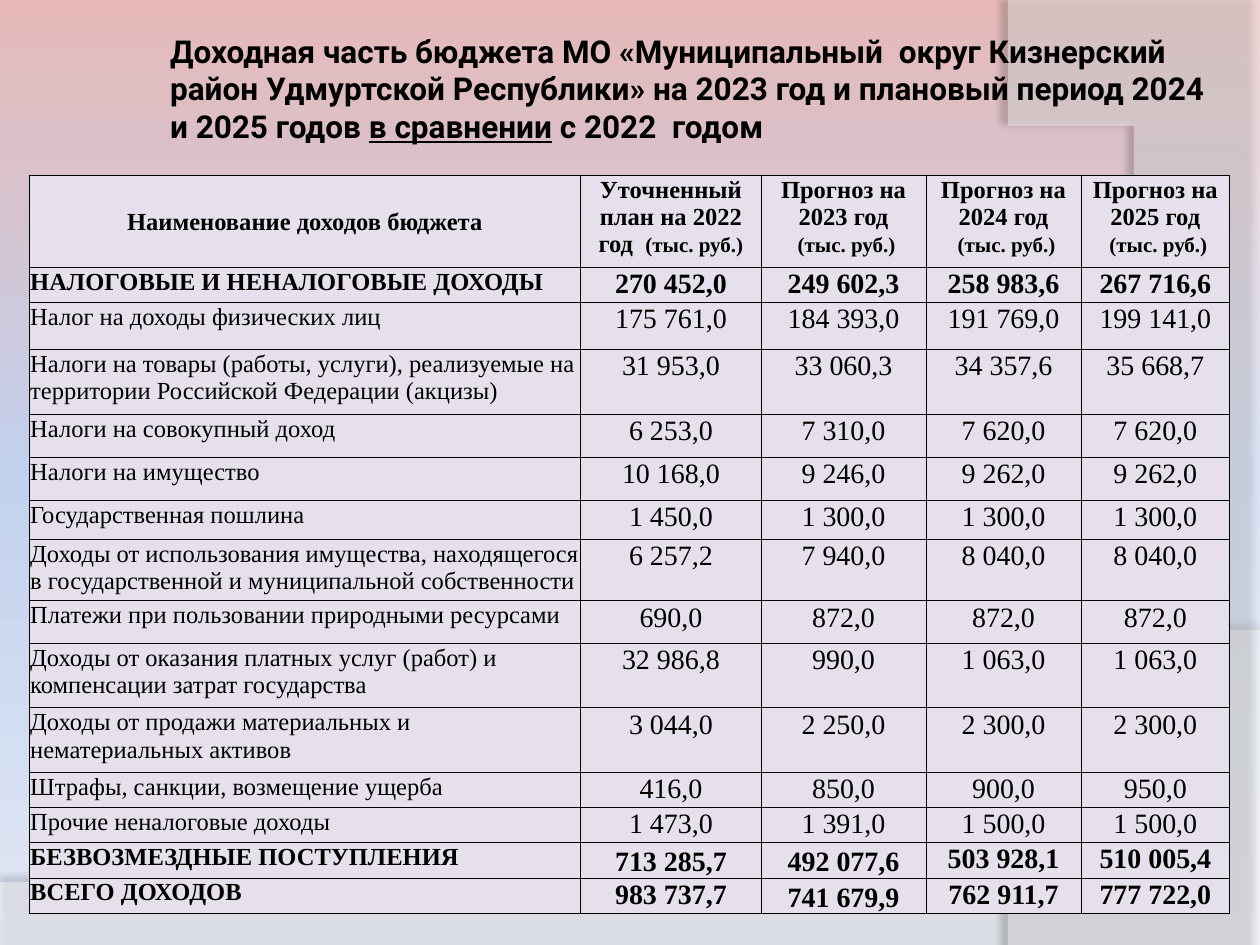
import copy

import pptx
import pptx.dml.color
import pptx.enum.text
import pptx.oxml
import pptx.oxml.ns
import pptx.util
from lxml import etree

Inches, Pt = pptx.util.Inches, pptx.util.Pt
RGBColor = pptx.dml.color.RGBColor
ALIGN = pptx.enum.text.PP_ALIGN
ANCHOR = pptx.enum.text.MSO_ANCHOR
qn = pptx.oxml.ns.qn

WIDTH, HEIGHT = 10, 7.5
BLACK = RGBColor(0x00, 0x00, 0x00)
WHITE = RGBColor(0xFF, 0xFF, 0xFF)
LILAC = RGBColor(0xE6, 0xE0, 0xEC)
PINK = RGBColor(0xE6, 0xB9, 0xB8)
BLUE = RGBColor(0xC2, 0xD1, 0xED)
PALE = RGBColor(0xE1, 0xE8, 0xF5)
SERIF = "Times New Roman"

TITLE = [
    ("Доходная часть бюджета МО «Муниципальный  округ Кизнерский район Удмуртской "
     "Республики» на 2023 год и плановый период 2024 и 2025 годов ", False),
    ("в сравнении", True),
    (" с 2022  годом", False),
]
UNIT = "(тыс. руб.)"
HEADERS = [["Наименование доходов бюджета"], ["Уточненный план на 2022 год  " + UNIT]] + [
    [f"Прогноз на {year} год", " " + UNIT] for year in (2023, 2024, 2025)]
ROWS = [
    ("НАЛОГОВЫЕ И НЕНАЛОГОВЫЕ ДОХОДЫ", "270 452,0", "249 602,3", "258 983,6", "267 716,6"),
    ("Налог на доходы физических лиц", "175 761,0", "184 393,0", "191 769,0", "199 141,0"),
    ("Налоги на товары (работы, услуги), реализуемые на территории Российской Федерации (акцизы)",
     "31 953,0", "33 060,3", "34 357,6", "35 668,7"),
    ("Налоги на совокупный доход", "6 253,0", "7 310,0", "7 620,0", "7 620,0"),
    ("Налоги на имущество", "10 168,0", "9 246,0", "9 262,0", "9 262,0"),
    ("Государственная пошлина", "1 450,0", "1 300,0", "1 300,0", "1 300,0"),
    ("Доходы от использования имущества, находящегося в государственной и муниципальной собственности",
     "6 257,2", "7 940,0", "8 040,0", "8 040,0"),
    ("Платежи при пользовании природными ресурсами", "690,0", "872,0", "872,0", "872,0"),
    ("Доходы от оказания платных услуг (работ) и компенсации затрат государства",
     "32 986,8", "990,0", "1 063,0", "1 063,0"),
    ("Доходы от продажи материальных и нематериальных активов",
     "3 044,0", "2 250,0", "2 300,0", "2 300,0"),
    ("Штрафы, санкции, возмещение ущерба", "416,0", "850,0", "900,0", "950,0"),
    ("Прочие неналоговые доходы", "1 473,0", "1 391,0", "1 500,0", "1 500,0"),
    ("БЕЗВОЗМЕЗДНЫЕ ПОСТУПЛЕНИЯ", "713 285,7", "492 077,6", "503 928,1", "510 005,4"),
    ("ВСЕГО ДОХОДОВ", "983 737,7", "741 679,9", "762 911,7", "777 722,0"),
]
COL_WIDTHS = [4.38, 1.43, 1.31, 1.23, 1.18]
ROW_HEIGHTS = [0.73, 0.28, 0.37, 0.52, 0.34, 0.34, 0.31, 0.49, 0.34, 0.51, 0.51] + [0.28] * 4
BOLD_ROWS = {1, 13, 14}
BOTTOM_CELLS = {(13, 1), (13, 2), (14, 2)}


def style(r, size, bold, name=SERIF):
    r.font.size, r.font.bold, r.font.name = Pt(size), bold, name
    r.font.color.rgb = BLACK


def paint_background(s):
    fill = s.background.fill
    fill.gradient()
    fill.gradient_angle = 270
    stops = s._element.find(".//" + qn("a:gsLst"))
    stops.insert(1, copy.deepcopy(stops[0]))
    for stop, color, position in zip(fill.gradient_stops, (PINK, BLUE, PALE), (0, 0.5, 1)):
        stop.color.rgb, stop.position = color, position


def bezier(a, b, c, d, steps=40):
    for t in (i / steps for i in range(1, steps + 1)):
        u = 1 - t
        weights = (u ** 3, 3 * u * u * t, 3 * u * t * t, t ** 3)
        yield tuple(sum(w * pt[axis] for w, pt in zip(weights, (a, b, c, d))) for axis in (0, 1))


def add_wave(s, box, corners, curve, opacity, shadow):
    x, y, w, h = box
    points = [(x + px * w, y + py * h) for px, py in corners + list(bezier(corners[-1], *curve))]
    builder = s.shapes.build_freeform(*points[0], scale=Inches(1))
    builder.add_line_segments(points[1:], close=True)
    sp = builder.convert_to_shape()
    sp.fill.solid()
    sp.fill.fore_color.rgb = WHITE
    sp.line.fill.background()
    sp.shadow.inherit = False
    color = sp._element.spPr.find(".//" + qn("a:srgbClr"))
    etree.SubElement(color, qn("a:alpha"), val=str(opacity * 1000))
    alpha, distance, angle = shadow
    effects = sp._element.spPr.find(qn("a:effectLst"))
    outer = etree.SubElement(effects, qn("a:outerShdw"), blurRad=str(Pt(4)),
                             dist=str(Pt(distance)), dir=str(angle * 60000),
                             algn="tl", rotWithShape="0")
    black = etree.SubElement(outer, qn("a:srgbClr"), val=str(BLACK))
    etree.SubElement(black, qn("a:alpha"), val=str(alpha * 1000))


def add_title(s, box):
    sp = s.shapes.title
    sp.left, sp.top, sp.width, sp.height = map(Inches, box)
    tf = sp.text_frame
    tf.word_wrap = True
    tf.auto_size = pptx.enum.text.MSO_AUTO_SIZE.NONE
    tf.vertical_anchor = ANCHOR.MIDDLE
    tf.margin_left = tf.margin_right = tf.margin_top = tf.margin_bottom = Inches(0.05)
    p = tf.paragraphs[0]
    p.alignment = ALIGN.LEFT
    for text, underline in TITLE:
        r = p.add_run()
        r.text = text
        style(r, 18, True, "Roboto")
        r.font.underline = underline
    s.shapes._spTree.append(sp._element)


def format_cell(cell, anchor):
    cell.margin_left = cell.margin_right = cell.margin_top = Inches(0.01)
    cell.margin_bottom = 0
    cell.vertical_anchor = anchor
    cell.fill.solid()
    cell.fill.fore_color.rgb = LILAC
    tcPr = cell._tc.get_or_add_tcPr()
    for i, side in enumerate(("a:lnL", "a:lnR", "a:lnT", "a:lnB")):
        ln = etree.Element(qn(side), w=str(Pt(0.5)))
        etree.SubElement(etree.SubElement(ln, qn("a:solidFill")), qn("a:srgbClr"), val=str(BLACK))
        tcPr.insert(i, ln)


def fill_header(cell, lines):
    tf = cell.text_frame
    tf.text = "\n".join(line.replace(UNIT, "") for line in lines)
    for p in tf.paragraphs:
        p.alignment = ALIGN.CENTER
        for r in p.runs:
            style(r, 14, True)
    if lines[-1].endswith(UNIT):
        r = tf.paragraphs[-1].add_run()
        r.text = UNIT
        style(r, 12, True)


def add_income_table(s, box):
    frame = s.shapes.add_table(len(ROW_HEIGHTS), len(COL_WIDTHS), *map(Inches, box))
    table = frame.table
    for column, width in zip(table.columns, COL_WIDTHS):
        column.width = Inches(width)
    for row, height in zip(table.rows, ROW_HEIGHTS):
        row.height = Inches(height)
    for j, lines in enumerate(HEADERS):
        cell = table.cell(0, j)
        format_cell(cell, ANCHOR.TOP if j else ANCHOR.MIDDLE)
        fill_header(cell, lines)
    for i, values in enumerate(ROWS, 1):
        for j, value in enumerate(values):
            cell = table.cell(i, j)
            format_cell(cell, ANCHOR.BOTTOM if (i, j) in BOTTOM_CELLS else ANCHOR.TOP)
            cell.text_frame.text = value
            p = cell.text_frame.paragraphs[0]
            p.alignment = ALIGN.CENTER if j else ALIGN.LEFT
            style(p.runs[0], 16 if j else 14, i in BOLD_ROWS)


def main():
    prs = pptx.Presentation()
    prs.slide_width, prs.slide_height = Inches(WIDTH), Inches(HEIGHT)
    s = prs.slides.add_slide(prs.slide_layouts[5])
    paint_background(s)
    add_wave(s, (0, 5.2, WIDTH, 2.3), [(0, 0.8), (0, 1), (1, 1), (1, 0)],
             [(0.56, 0.9), (0.39, 0.86), (0, 0.8)], 45, (35, 3.5, 270))
    add_wave(s, (0.8 * WIDTH, 0, 0.2 * WIDTH, HEIGHT), [(1, 0), (1, 1), (0.1, 1)],
             [(0.68, 0.83), (1.09, 0.4), (0, 0)], 40, (45, 4, 180))
    add_title(s, (1.3, 0.33, 8.35, 0.74))
    add_income_table(s, (0.23, 1.39, sum(COL_WIDTHS), sum(ROW_HEIGHTS)))
    prs.save("out.pptx")


if __name__ == "__main__":
    main()
